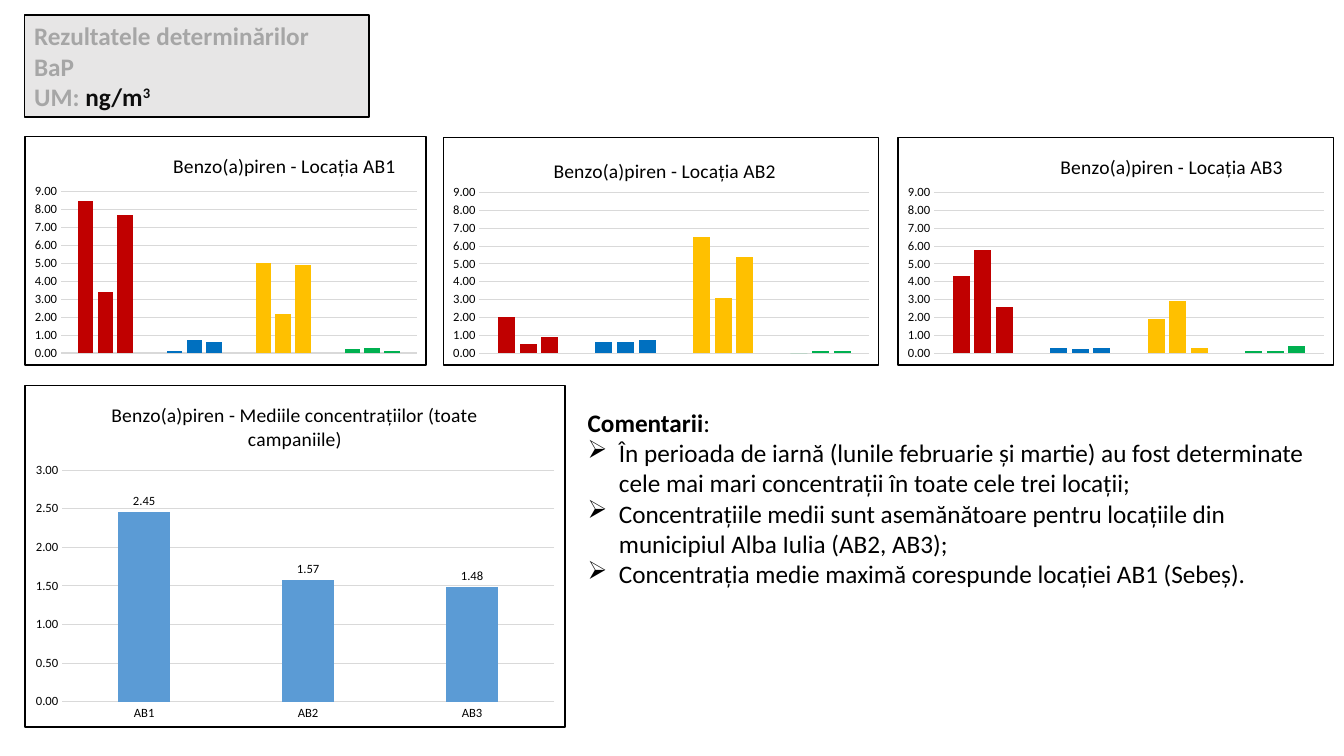
from dataclasses import dataclass

from lxml import etree
from pptx import Presentation
from pptx import util as u
from pptx.chart.data import CategoryChartData
from pptx.dml.color import RGBColor
from pptx.enum import chart as ch, shapes, text
from pptx.oxml import parse_xml
from pptx.oxml.ns import nsdecls, qn


@dataclass(frozen=True)
class Theme:
    font: str = "Calibri"
    body: int = 18
    title: int = 14
    label: int = 9
    ink: str = "000000"
    unit: str = "0D0D0D"
    muted: str = "A6A6A6"
    panel: str = "E7E6E6"
    paper: str = "FFFFFF"
    grid: str = "D9D9D9"
    mean: str = "5B9BD5"
    months: tuple = ("C00000", "0070C0", "FFC000", "00B050")


THEME = Theme()
INSET = 0.36, 0.55, 0.09, 0.12
SITES = [
    # name, box, title left and top, campaign series
    ("AB1", (0.24, 1.35, 3.99, 2.28), (1.44, 0.12),
     [(8.5, 0.1, 5, 0.2), (3.4, 0.7, 2.2, 0.3), (7.7, 0.6, 4.9, 0.1)]),
    ("AB2", (4.39, 1.36, 4.33, 2.27), (1.06, 0.16),
     [(2, 0.6, 6.5, 0), (0.5, 0.6, 3.1, 0.1), (0.9, 0.7, 5.4, 0.1)]),
    ("AB3", (8.9, 1.36, 4.33, 2.27), (1.58, 0.12),
     [(4.3, 0.3, 1.9, 0.1), (5.8, 0.2, 2.9, 0.1), (2.6, 0.3, 0.3, 0.4)]),
]
NOTES = [
    "În perioada de iarnă (lunile februarie și martie) au fost determinate "
    "cele mai mari concentrații în toate cele trei locații;",
    "Concentrațiile medii sunt asemănătoare pentru locațiile din "
    "municipiul Alba Iulia (AB2, AB3);",
    "Concentrația medie maximă corespunde locației AB1 (Sebeș).",
]


def rgb(code):
    return RGBColor.from_string(code)


def inches(box):
    return [u.Inches(side) for side in box]


def style(font, size, color=THEME.ink, bold=False):
    font.name, font.size, font.bold = THEME.font, u.Pt(size), bold
    font.color.rgb = rgb(color)


def paint(fill, color):
    fill.solid()
    fill.fore_color.rgb = rgb(color)


def layout(parent, index, inner=False, **parts):
    """Pin a chart part at fractions of the chart's size."""
    old = parent.find(qn("c:layout"))
    if old is not None:
        parent.remove(old)
    node = parse_xml(f"<c:layout {nsdecls('c')}><c:manualLayout/></c:layout>")
    tags = {"layoutTarget": "inner"} if inner else {}
    tags.update(xMode="edge", yMode="edge", **parts)
    for name, value in tags.items():
        etree.SubElement(node[0], qn(f"c:{name}")).set("val", str(value))
    parent.insert(index, node)


def frame(chart):
    """Give the chart area a white fill and a black border."""
    area = parse_xml(
        f"<c:spPr {nsdecls('c', 'a')}>"
        f'<a:solidFill><a:srgbClr val="{THEME.paper}"/></a:solidFill>'
        f'<a:ln w="{u.Pt(1)}"><a:solidFill><a:srgbClr val="{THEME.ink}"/>'
        "</a:solidFill></a:ln></c:spPr>")
    chart.element.find(qn("c:chart")).addnext(area)


def columns(slide, box, title, cats, rows, inset, spot=None):
    """Add a framed column chart; inset is the plot's margin in inches."""
    data = CategoryChartData(number_format="0.00")
    data.categories = cats
    for number, row in enumerate(rows, 1):
        data.add_series(f"Series {number}", row)
    chart = slide.shapes.add_chart(
        ch.XL_CHART_TYPE.COLUMN_CLUSTERED, *inches(box), data).chart
    style(chart.font, 10)
    chart.has_legend = False
    frame(chart)

    chart.has_title = True
    head = chart.chart_title.text_frame
    head.text = title
    style(head.paragraphs[0].font, THEME.title)
    wide, high = box[2:]
    root = chart.element.find(qn("c:chart"))
    if spot:
        layout(root.find(qn("c:title")), 1,
               x=round(spot[0] / wide, 3), y=round(spot[1] / high, 3))
    left, top, right, low = inset
    layout(root.find(qn("c:plotArea")), 0, inner=True,
           x=round(left / wide, 3), y=round(top / high, 3),
           w=round(1 - (left + right) / wide, 3),
           h=round(1 - (top + low) / high, 3))

    plot = chart.plots[0]
    plot.gap_width, plot.overlap = 219, -27
    plot.vary_by_categories = False
    axis = chart.value_axis
    axis.minimum_scale = 0
    axis.major_gridlines.format.line.color.rgb = rgb(THEME.grid)
    axis.major_gridlines.format.line.width = u.Pt(0.75)
    axis.format.line.fill.background()
    axis.tick_labels.number_format = "0.00"
    axis.tick_labels.number_format_is_linked = False
    for side in (axis, chart.category_axis):
        side.major_tick_mark = ch.XL_TICK_MARK.NONE
        style(side.tick_labels.font, THEME.label)
    return chart


def site(slide, name, box, spot, rows):
    chart = columns(slide, box, f"Benzo(a)piren - Locația {name}",
                    ["1", "2", "3", "4"], rows, INSET, spot)
    chart.value_axis.maximum_scale = 9
    chart.value_axis.major_unit = 1
    chart.category_axis.visible = False
    for series in chart.plots[0].series:
        for index, color in enumerate(THEME.months):
            paint(series.points[index].format.fill, color)


def means(slide, box):
    chart = columns(
        slide, box, "Benzo(a)piren - Mediile concentrațiilor (toate campaniile)",
        [name for name, *_ in SITES], [(2.45, 1.57, 1.48)],
        (0.37, 0.84, 0.11, 0.25))
    chart.value_axis.major_unit = 0.5
    line = chart.category_axis.format.line
    line.color.rgb, line.width = rgb(THEME.grid), u.Pt(0.75)
    series = chart.plots[0].series[0]
    paint(series.format.fill, THEME.mean)
    labels = series.data_labels
    labels.show_value = True
    labels.number_format, labels.number_format_is_linked = "0.00", False
    labels.position = ch.XL_LABEL_POSITION.OUTSIDE_END
    style(labels.font, THEME.label)


def header(slide, box):
    panel = slide.shapes.add_shape(shapes.MSO_SHAPE.RECTANGLE, *inches(box))
    panel.shadow.inherit = False
    paint(panel.fill, THEME.panel)
    panel.line.color.rgb, panel.line.width = rgb(THEME.ink), u.Pt(1)
    body = panel.text_frame
    body.word_wrap = True
    body.text = "Rezultatele determinărilor\nBaP\nUM: "
    for para in body.paragraphs:
        para.alignment = text.PP_ALIGN.LEFT
        style(para.font, THEME.body, THEME.muted, True)
    for words in ("ng/m", "3"):
        run = para.add_run()
        run.text = words
        run.font.color.rgb = rgb(THEME.unit)
    run.font._element.set("baseline", "30000")


def notes(slide, box):
    body = slide.shapes.add_textbox(*inches(box)).text_frame
    body.word_wrap = True
    head = body.paragraphs[0]
    for words, bold in (("Comentarii", True), (":", False)):
        run = head.add_run()
        run.text, run.font.bold = words, bold
    style(head.font, THEME.body)
    for note in NOTES:
        para = body.add_paragraph()
        para.text = note
        props = para._p.get_or_add_pPr()
        props.set("marL", str(u.Inches(0.31)))
        props.set("indent", str(u.Inches(-0.31)))
        etree.SubElement(props, qn("a:buFont")).set("typeface", "Wingdings")
        etree.SubElement(props, qn("a:buChar")).set("char", "Ø")
        style(para.font, THEME.body)


def main():
    deck = Presentation()
    deck.slide_width, deck.slide_height = inches((13.33, 7.5))
    slide = deck.slides.add_slide(deck.slide_layouts[6])
    header(slide, (0.24, 0.15, 3.42, 1.01))
    notes(slide, (5.73, 3.99, 7.35, 1.92))
    for entry in SITES:
        site(slide, *entry)
    means(slide, (0.24, 3.82, 5.37, 3.4))
    deck.save("out.pptx")


if __name__ == "__main__":
    main()
